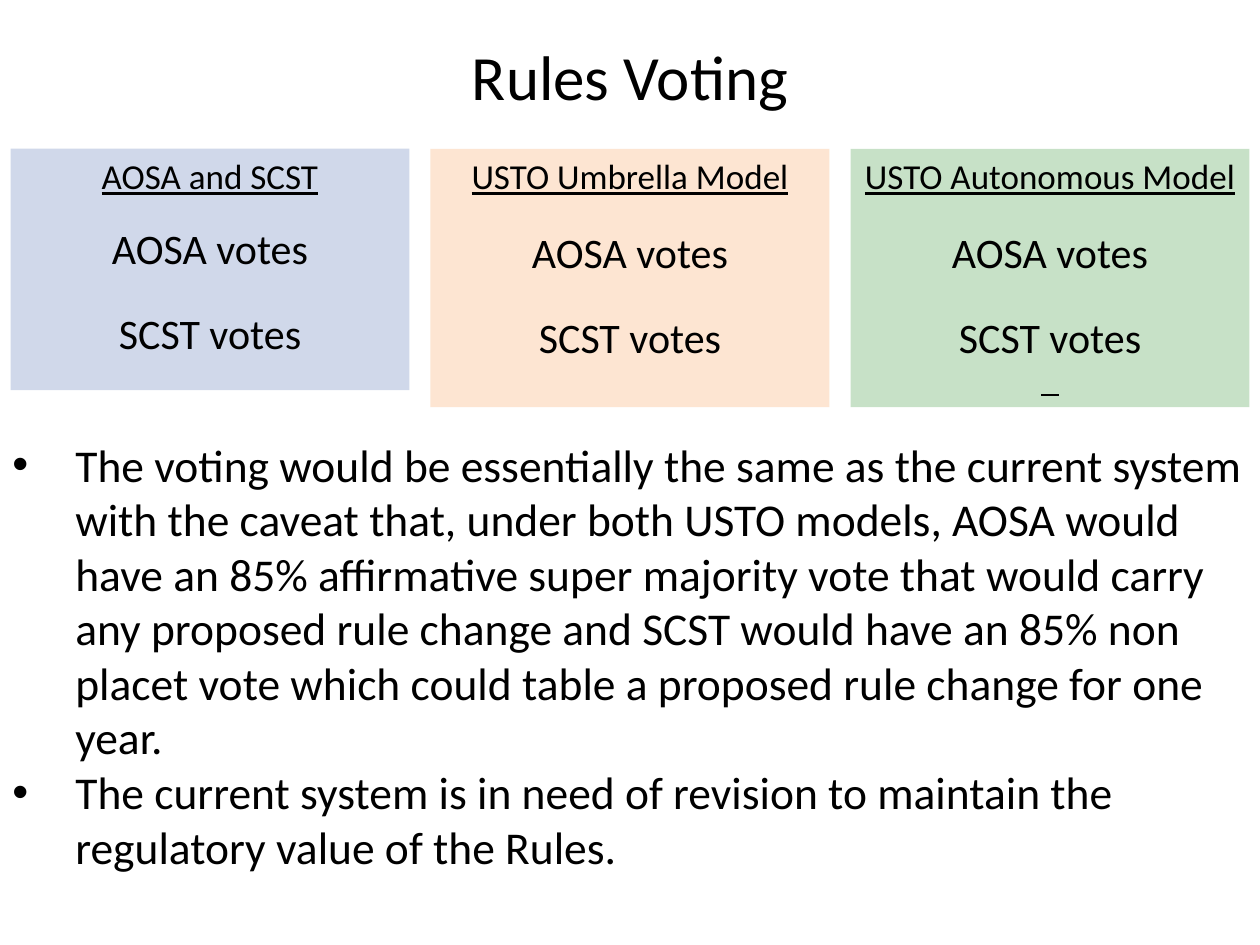
from pptx import Presentation
from pptx.dml.color import RGBColor
from pptx.enum import shapes, text
from pptx.oxml.ns import qn
from pptx.util import Pt
from lxml import etree

TITLE = "Rules Voting"
VOTES = ["AOSA votes", "SCST votes"]
# heading, fill, opacity %, height, space above first vote
CARDS = [
    ("AOSA and SCST", "2951A0", 22, 138, 14.6),
    ("USTO Umbrella Model", "FCD5B5", 60, 147.6, 17),
    ("USTO Autonomous Model", "228B22", 25, 147.6, 17),
]
POINTS = [
    "The voting would be essentially the same as the current system with the "
    "caveat that, under both USTO models, AOSA would have an 85% affirmative "
    "super majority vote that would carry any proposed rule change and SCST "
    "would have an 85% non placet vote which could table a proposed rule "
    "change for one year.",
    "The current system is in need of revision to maintain the regulatory "
    "value of the Rules.",
]
WIDE, HIGH = 720, 540
LEFT, TOP, CARD, STEP = 6, 85, 228, 240
VOTE_GAP = 19.5
INDENT = 36


def color(code):
    return RGBColor.from_string(code)


def sub(parent, tag, **attrs):
    """Add a child element with the given attributes."""
    node = etree.SubElement(parent, qn(tag))
    for key, value in attrs.items():
        node.set(key, str(value))
    return node


def write(frame, words, size, first=False, center=True, line=False,
          gap=0, bullet=False):
    """Add one formatted paragraph to a text frame."""
    para = frame.paragraphs[0] if first else frame.add_paragraph()
    if bullet:
        props = para._p.get_or_add_pPr()
        props.set("marL", str(Pt(INDENT)))
        props.set("indent", str(-Pt(INDENT)))
        sub(props, "a:buFont", typeface="Arial")
        sub(props, "a:buChar", char="•")
    para.alignment = (text.PP_ALIGN.CENTER if center
                      else text.PP_ALIGN.LEFT)
    if gap:
        para.space_before = Pt(gap)
    run = para.add_run()
    run.text = words
    run.font.name = "Calibri"
    run.font.size = Pt(size)
    run.font.underline = line
    run.font.color.rgb = color("000000")


def add_box(slide, top, high):
    box = slide.shapes.add_textbox(0, Pt(top), Pt(WIDE), Pt(high))
    box.text_frame.word_wrap = True
    return box.text_frame


def add_card(slide, left, head, fill, alpha, high, gap):
    card = slide.shapes.add_shape(shapes.MSO_SHAPE.RECTANGLE, Pt(left),
                                  Pt(TOP), Pt(CARD), Pt(high))
    card.shadow.inherit = False
    card.line.fill.background()
    card.fill.solid()
    card.fill.fore_color.rgb = color(fill)
    tint = card._element.spPr.find(qn("a:solidFill"))[0]
    sub(tint, "a:alpha", val=alpha * 1000)
    frame = card.text_frame
    frame.word_wrap = True
    frame.vertical_anchor = text.MSO_ANCHOR.TOP
    write(frame, head, 20, first=True, line=True)
    for vote, space in zip(VOTES, (gap, VOTE_GAP)):
        write(frame, vote, 24, gap=space)


def add_dash(slide, mid, top, wide):
    dash = slide.shapes.add_connector(
        shapes.MSO_CONNECTOR.STRAIGHT, Pt(mid - wide / 2), Pt(top),
        Pt(mid + wide / 2), Pt(top))
    dash.line.color.rgb = color("000000")
    dash.line.width = Pt(1.25)
    sub(dash._element.spPr, "a:effectLst")


def main():
    deck = Presentation()
    deck.slide_width, deck.slide_height = Pt(WIDE), Pt(HIGH)
    slide = deck.slides.add_slide(deck.slide_layouts[6])
    for i, card in enumerate(CARDS):
        add_card(slide, LEFT + i * STEP, *card)
    add_dash(slide, LEFT + 2 * STEP + CARD / 2, 225.7, 10)
    write(add_box(slide, 18, 51), TITLE, 36, first=True)
    body = add_box(slide, 246, 291)
    for i, point in enumerate(POINTS):
        write(body, point, 26, first=i == 0, center=False, bullet=True)
    deck.save("out.pptx")


if __name__ == "__main__":
    main()
